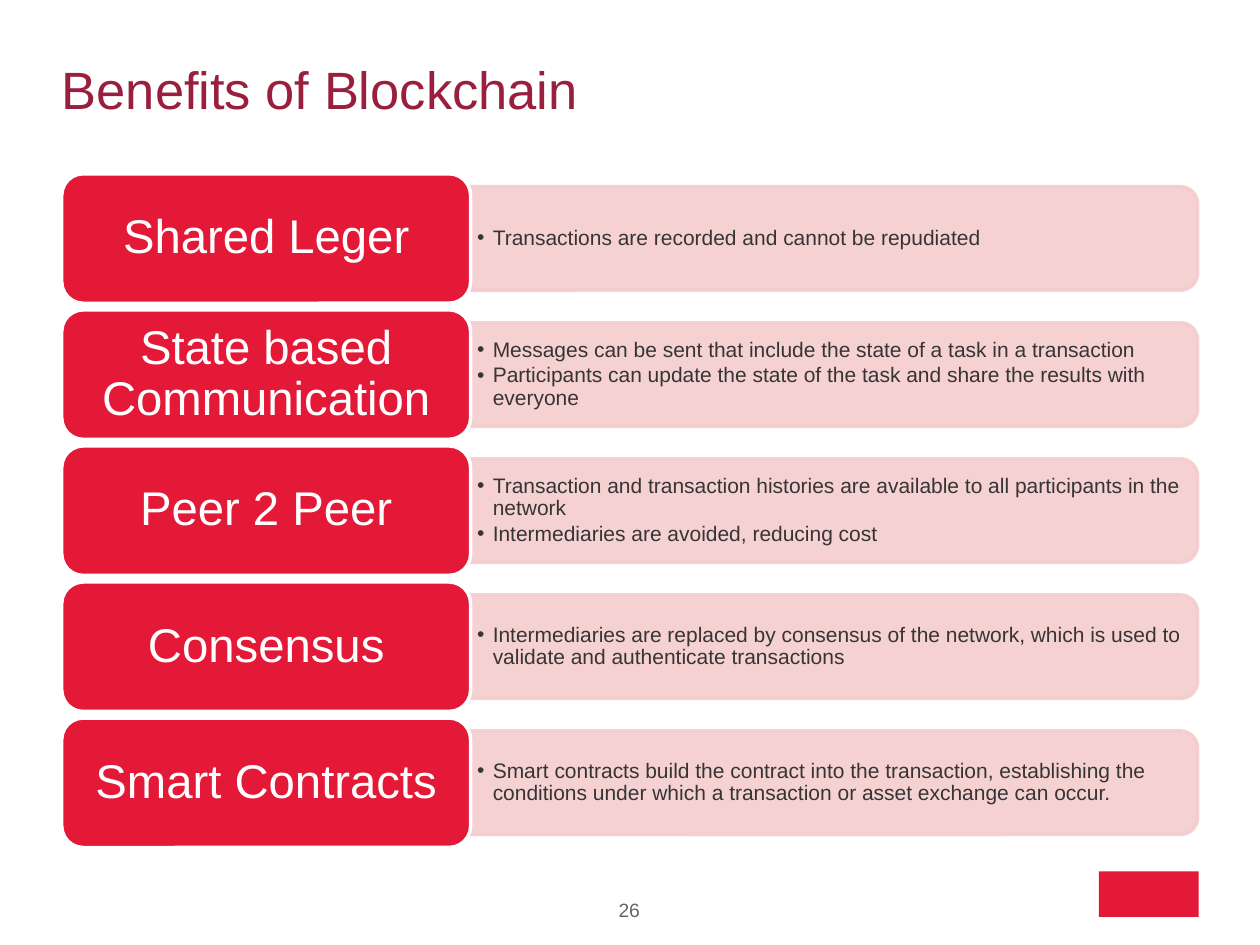
from lxml.etree import SubElement
from pptx import Presentation
from pptx.dml.color import RGBColor
from pptx.enum.shapes import MSO_SHAPE
from pptx.enum.text import MSO_ANCHOR, PP_ALIGN
from pptx.oxml.ns import qn
from pptx.util import Pt

RED = RGBColor(0xE3, 0x19, 0x37)
PINK = RGBColor(0xF4, 0xCC, 0xCE)
WINE = RGBColor(0x99, 0x1F, 0x3D)
DARK = RGBColor(0x36, 0x35, 0x34)
GREY = RGBColor(0x66, 0x66, 0x66)
WHITE = RGBColor(0xFF, 0xFF, 0xFF)

LEFT = 35.3
FIRST_TOP = 99.3
ROW_PITCH = 77.75
LABEL_WIDTH, LABEL_HEIGHT = 233.7, 74
PANEL_WIDTH, PANEL_HEIGHT = 415.4, 59.2
TEXT_WIDTH, TEXT_HEIGHT = 412.6, 53.3

BENEFITS = [
    ("Shared Leger", ["Transactions are recorded and cannot be repudiated"]),
    ("State based Communication", [
        "Messages can be sent that include the state of a task in a transaction",
        "Participants can update the state of the task and share the results with everyone",
    ]),
    ("Peer 2 Peer", [
        "Transaction and transaction histories are available to all participants in the network",
        "Intermediaries are avoided, reducing cost",
    ]),
    ("Consensus", [
        "Intermediaries are replaced by consensus of the network, which is used to "
        "validate and authenticate transactions",
    ]),
    ("Smart Contracts", [
        "Smart contracts build the contract into the transaction, establishing the "
        "conditions under which a transaction or asset exchange can occur.",
    ]),
]


class SlideBuilder:
    font_name = "Arial"

    def __init__(self, slide):
        self.slide = slide

    def shape(self, kind, left, top, width, height, fill, line=None):
        shape = self.slide.shapes.add_shape(kind, Pt(left), Pt(top), Pt(width), Pt(height))
        shape.shadow.inherit = False
        shape.fill.solid()
        shape.fill.fore_color.rgb = fill
        if line is None:
            shape.line.fill.background()
        else:
            shape.line.color.rgb = line
            shape.line.width = Pt(2)
        return shape

    def fill_text(self, box, lines, size, color, align=PP_ALIGN.LEFT, anchor=MSO_ANCHOR.MIDDLE,
                  insets=(0, 0), line_spacing=1.0, space_after=0, bullets=False):
        """Fill a box with one paragraph per line; insets are (horizontal, vertical)."""
        frame = box.text_frame
        frame.word_wrap = True
        frame.vertical_anchor = anchor
        frame.margin_left = frame.margin_right = Pt(insets[0])
        frame.margin_top = frame.margin_bottom = Pt(insets[1])
        for index, line in enumerate(lines):
            para = frame.add_paragraph() if index else frame.paragraphs[0]
            para.alignment = align
            para.line_spacing = line_spacing
            para.space_after = Pt(space_after)
            if bullets:
                self.bullet(para)
            span = para.add_run()
            span.text = line
            span.font.name = self.font_name
            span.font.size = Pt(size)
            span.font.color.rgb = color

    def bullet(self, para):
        properties = para._p.get_or_add_pPr()
        properties.set("marL", str(Pt(9)))
        properties.set("indent", str(Pt(-9)))
        SubElement(properties, qn("a:buFont"), typeface=self.font_name)
        SubElement(properties, qn("a:buChar"), char="•")

    def text(self, left, top, width, height, lines, size, color, **style):
        box = self.slide.shapes.add_textbox(Pt(left), Pt(top), Pt(width), Pt(height))
        self.fill_text(box, lines, size, color, **style)

    def panel(self, left, middle):
        """Draw a panel rounded on its right side: a top-rounded shape turned by 90 degrees."""
        center = left + PANEL_WIDTH / 2
        panel = self.shape(MSO_SHAPE.ROUND_2_SAME_RECTANGLE, center - PANEL_HEIGHT / 2,
                           middle - PANEL_WIDTH / 2, PANEL_HEIGHT, PANEL_WIDTH, PINK, PINK)
        panel.rotation = 90
        for color in panel._element.spPr.iter(qn("a:srgbClr")):
            SubElement(color, qn("a:alpha"), val="90000")

    def benefit(self, top, name, points):
        middle = top + LABEL_HEIGHT / 2
        right = LEFT + LABEL_WIDTH
        self.panel(right, middle)
        self.text(right, middle - TEXT_HEIGHT / 2, TEXT_WIDTH, TEXT_HEIGHT, points, 12, DARK,
                  insets=(3.6, 1.8), line_spacing=0.9, space_after=1.8, bullets=True)
        label = self.shape(MSO_SHAPE.ROUNDED_RECTANGLE, LEFT, top,
                           LABEL_WIDTH, LABEL_HEIGHT, RED, WHITE)
        self.fill_text(label, [name], 27, WHITE, align=PP_ALIGN.CENTER,
                       insets=(8, 4), line_spacing=0.9)


def main():
    deck = Presentation()
    deck.slide_width, deck.slide_height = Pt(720), Pt(540)
    page = SlideBuilder(deck.slides.add_slide(deck.slide_layouts[6]))

    page.shape(MSO_SHAPE.RECTANGLE, 628, 498, 57, 26, RED)
    page.text(LEFT, 14.4, 648.7, 72.7, ["Benefits of Blockchain"], 30, WINE)
    for row, (name, points) in enumerate(BENEFITS):
        page.benefit(FIRST_TOP + row * ROW_PITCH, name, points)
    page.text(329, 513.4, 61.2, 18.7, ["26"], 11, GREY,
              align=PP_ALIGN.CENTER, anchor=MSO_ANCHOR.TOP)

    deck.save("out.pptx")


if __name__ == "__main__":
    main()
